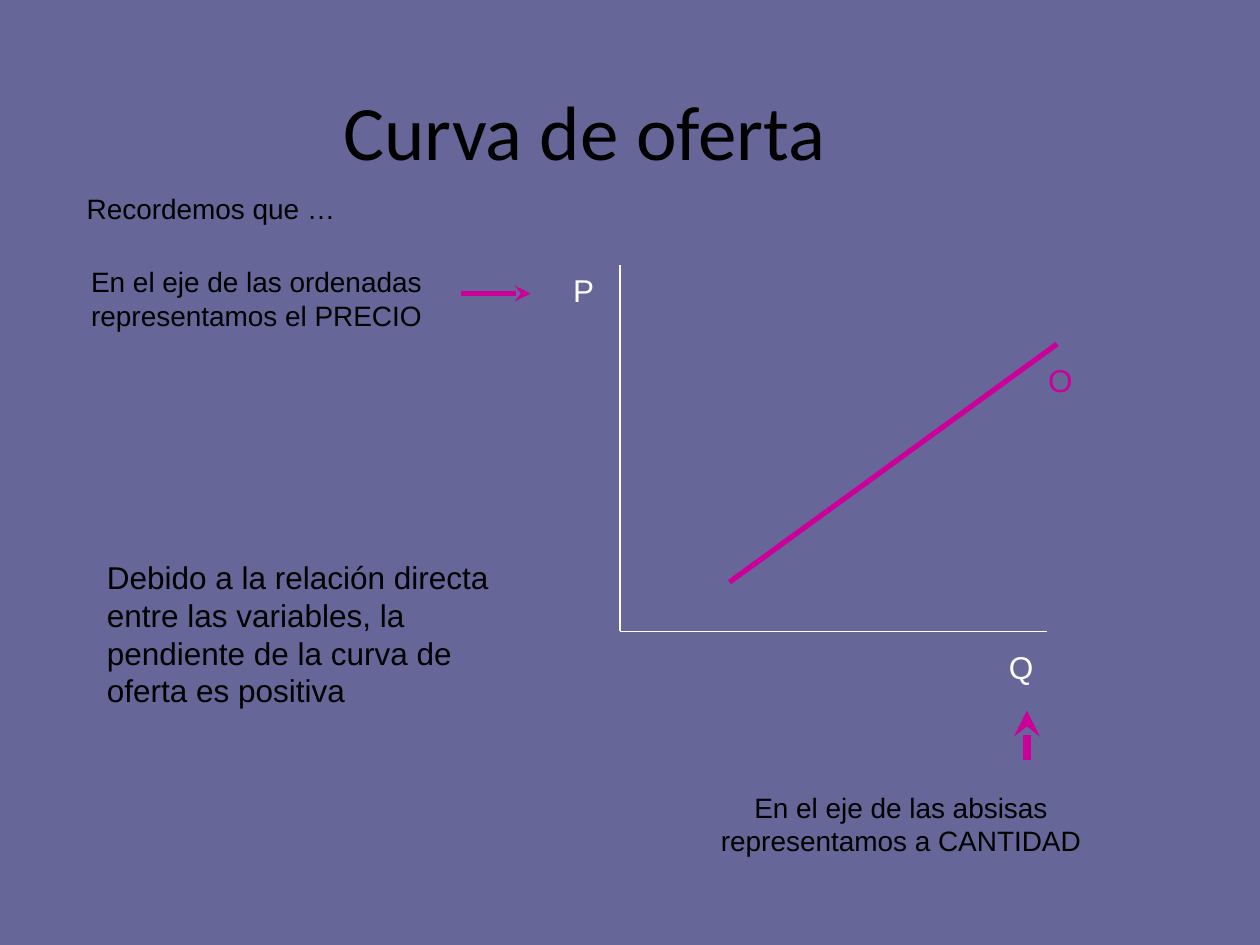
import dataclasses

import pptx
import pptx.dml.color
import pptx.enum.shapes
import pptx.enum.text
import pptx.oxml.ns
import pptx.util
from lxml import etree

ALIGN = pptx.enum.text.PP_ALIGN
ANCHOR = pptx.enum.text.MSO_ANCHOR
COLUMNS, ROWS = 100, 75
CELL = pptx.util.Inches(0.1)


@dataclasses.dataclass(frozen=True)
class Theme:
    background: str = "666699"
    ink: str = "000000"
    axis: str = "FFFFFF"
    accent: str = "CC0099"
    title_font: str = "Calibri"
    body_font: str = "Arial"
    title_size: float = 44
    large_size: float = 18
    small_size: float = 16
    axis_width: float = 0.75
    curve_width: float = 3
    pointer_width: float = 5


THEME = Theme()


def grid(*cells):
    return [round(cell * CELL) for cell in cells]


def rgb(value):
    return pptx.dml.color.RGBColor.from_string(value)


def apply(target, formats):
    for name, value in formats.items():
        setattr(target, name, value)


def add_text(slide, words, place, size, color=THEME.ink, font=THEME.body_font,
             align=ALIGN.LEFT, anchor=ANCHOR.TOP):
    frame = slide.shapes.add_textbox(*grid(*place)).text_frame
    apply(frame, {"word_wrap": True, "vertical_anchor": anchor})
    paragraph = frame.paragraphs[0]
    paragraph.alignment = align
    run = paragraph.add_run()
    run.text = words
    apply(run.font, {"name": font, "size": pptx.util.Pt(size)})
    run.font.color.rgb = rgb(color)
    return frame


def add_axis_note(slide, words, place):
    frame = add_text(slide, words, place, THEME.small_size, align=ALIGN.CENTER)
    apply(frame, {"margin_left": pptx.util.Inches(0.46),
                  "margin_top": pptx.util.Inches(0.08)})


def add_line(slide, start, end, color, width, arrow=False):
    line = slide.shapes.add_connector(
        pptx.enum.shapes.MSO_CONNECTOR.STRAIGHT, *grid(*start, *end))
    line.line.color.rgb = rgb(color)
    line.line.width = pptx.util.Pt(width)
    qn = pptx.oxml.ns.qn
    properties = line.element.spPr
    if arrow:
        etree.SubElement(properties.find(qn("a:ln")), qn("a:tailEnd"), type="stealth")
    etree.SubElement(properties, qn("a:effectLst"))


def add_supply_graph(slide):
    origin = (49.2, 50.1)
    for axis_end in ((49.2, 21), (83.1, 50.1)):
        add_line(slide, origin, axis_end, THEME.axis, THEME.axis_width)
    add_line(slide, (57.9, 46.2), (83.9, 27.3), THEME.accent, THEME.curve_width)
    for letter, left, top, color in (("P", 44.5, 21, THEME.axis),
                                     ("Q", 79.1, 50.9, THEME.axis),
                                     ("O", 82.2, 28.2, THEME.accent)):
        add_text(slide, letter, (left, top, 4.7, 4), THEME.large_size, color)


def add_axis_pointers(slide):
    for start, end, width in (((36.6, 23.3), (42.1, 23.3), THEME.curve_width),
                              ((81.5, 60.3), (81.5, 56.4), THEME.pointer_width)):
        add_line(slide, start, end, THEME.accent, width, arrow=True)


def main():
    deck = pptx.Presentation()
    apply(deck, {"slide_width": COLUMNS * CELL, "slide_height": ROWS * CELL})
    slide = deck.slides.add_slide(deck.slide_layouts[6])
    slide.background.fill.solid()
    slide.background.fill.fore_color.rgb = rgb(THEME.background)

    add_text(slide, " Curva de oferta", (6.7, 3.6, 78, 13.4), THEME.title_size,
             font=THEME.title_font, align=ALIGN.CENTER, anchor=ANCHOR.MIDDLE)
    add_text(slide, "Recordemos que …", (5.9, 14.7, 24.4, 3.7), THEME.small_size)
    add_axis_note(slide, "En el eje de las ordenadas representamos el PRECIO",
                  (2, 20.2, 33.1, 7.1))
    add_supply_graph(slide)
    add_axis_pointers(slide)
    add_axis_note(slide, "En el eje de las absisas representamos a CANTIDAD",
                  (50, 61.9, 39.4, 7.1))
    add_text(slide, "Debido a la relación directa entre las variables, la "
             "pendiente de la curva de oferta es positiva",
             (7.5, 43.8, 32.3, 13), THEME.large_size)
    deck.save("out.pptx")


if __name__ == "__main__":
    main()
